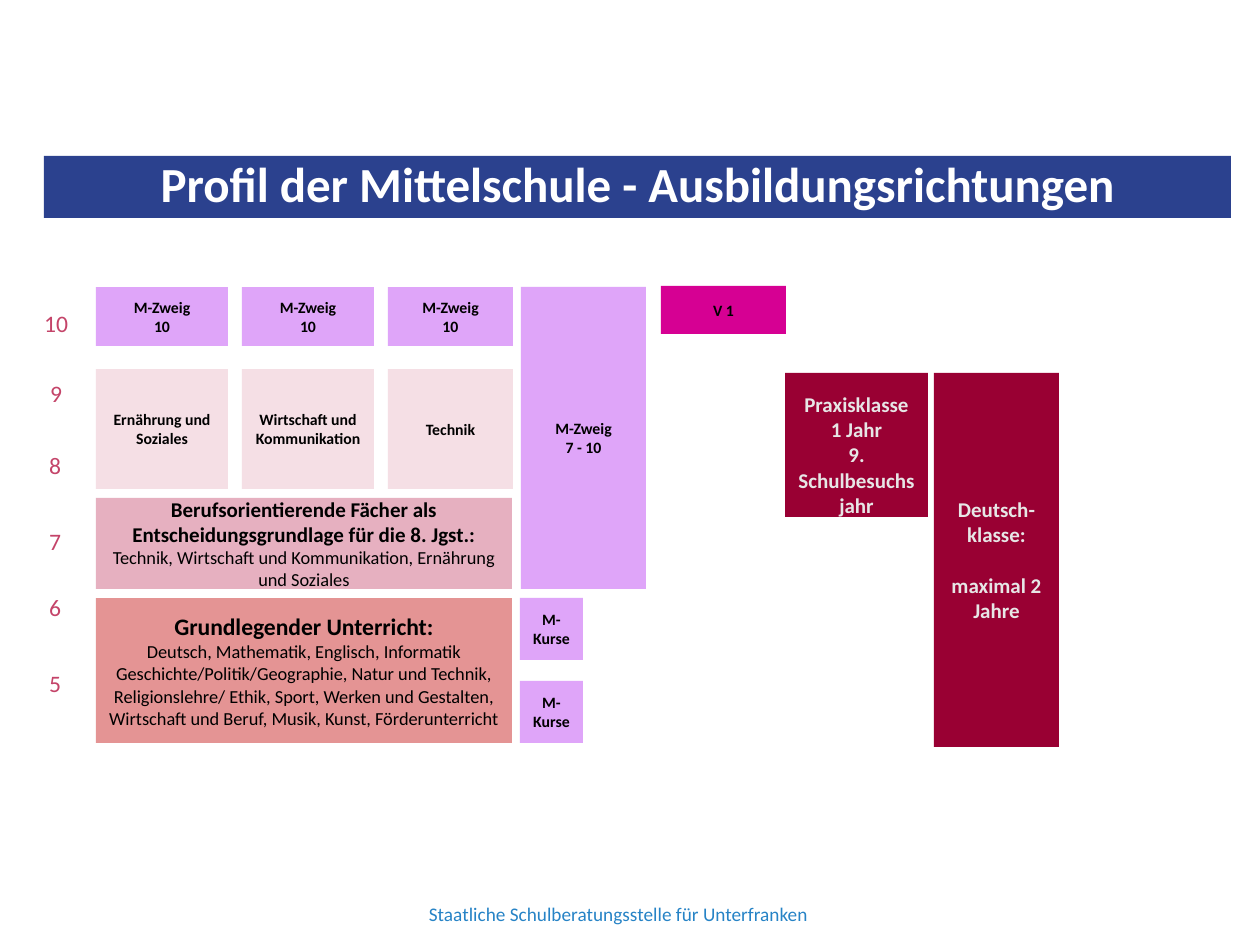
from lxml import etree
from pptx import Presentation
from pptx.dml.color import RGBColor
from pptx.enum.shapes import MSO_SHAPE as SHAPE
from pptx.enum.text import MSO_ANCHOR as ANCHOR, PP_ALIGN as ALIGN
from pptx.oxml.ns import qn
from pptx.util import Emu, Pt

SCALE = 914400 / 126  # EMU per px
COLORS = {
    "navy": "2B418E", "white": "FFFFFF", "black": "000000", "blue": "2683C6",
    "rose": "C44469", "red": "C00000", "blush": "F5DFE5", "lilac": "DFA5F9",
    "magenta": "D60093", "wine": "990033", "grey": "E7E6E6",
}

deck = Presentation()
deck.slide_width, deck.slide_height = Emu(round(1260 * SCALE)), Emu(round(945 * SCALE))
page = deck.slides.add_slide(deck.slide_layouts[6])


def add_box(text, at, fill=None, alpha=None, color="black", size=9, bold=True,
            detail=None, gap=0, spacing=None, side=13, top=6, anchor=ANCHOR.MIDDLE):
    """Place text, one paragraph a line; detail is a plain last paragraph."""
    place = [Emu(round(px * SCALE)) for px in at]
    if fill:
        box = page.shapes.add_shape(SHAPE.RECTANGLE, *place)
        box.shadow.inherit = False
        box.fill.solid()
        box.fill.fore_color.rgb = RGBColor.from_string(COLORS[fill])
        box.line.fill.background()
        if alpha:
            tint = box.fill._xPr.find(".//" + qn("a:srgbClr"))
            etree.SubElement(tint, qn("a:alpha")).set("val", str(alpha * 1000))
    else:
        box = page.shapes.add_textbox(*place)
    frame = box.text_frame
    frame.word_wrap = True
    frame.vertical_anchor = anchor
    frame.margin_left = frame.margin_right = Emu(round(side * SCALE))
    frame.margin_top, frame.margin_bottom = Emu(round(top * SCALE)), Emu(round(6 * SCALE))

    lines = [(line, size, bold) for line in text.split("\n")]
    if detail:
        lines.append((detail, 10.5, False))
    for index, (line, points, heavy) in enumerate(lines):
        para = frame.paragraphs[0] if index == 0 else frame.add_paragraph()
        para.alignment = ALIGN.CENTER
        if spacing:
            para.line_spacing = spacing
        if index and gap:
            para.space_before = Pt(gap)
        span = para.add_run()
        span.text = line
        span.font.name = "Calibri"
        span.font.size = Pt(points)
        span.font.bold = heavy
        span.font.color.rgb = RGBColor.from_string(COLORS[color])


# Footer and title
add_box("Staatliche Schulberatungsstelle für Unterfranken", (389, 896, 459, 36),
        color="blue", size=11, bold=False, anchor=ANCHOR.TOP)
add_box("Profil der Mittelschule - Ausbildungsrichtungen", (44, 156, 1187, 62),
        fill="navy", color="white", size=28, spacing=0.9)

# Grade labels
for grade, left, top in [(10, 29, 299), (9, 29, 369), (8, 28, 441),
                         (7, 28, 517), (6, 28, 583), (5, 28, 659)]:
    add_box(str(grade), (left, top, 54, 48), color="rose", size=13.5, bold=False)

# Common lessons, grades 5 to 7
add_box("Grundlegender Unterricht:", (96, 598, 416, 145), fill="red", alpha=42, size=13.5,
        detail="Deutsch, Mathematik, Englisch, Informatik Geschichte/Politik/Geographie, "
               "Natur und Technik, Religionslehre/ Ethik, Sport, Werken und Gestalten, "
               "Wirtschaft und Beruf, Musik, Kunst, Förderunterricht")
add_box("Berufsorientierende Fächer als Entscheidungsgrundlage für die 8. Jgst.:",
        (96, 498, 416, 91), fill="rose", alpha=42, size=12,
        detail="Technik, Wirtschaft und Kommunikation, Ernährung und Soziales")

# Vocational branches, each topped by M-Zweig 10
for branch, left, width, side in [("Ernährung und Soziales", 96, 132, 13),
                                  ("Wirtschaft und Kommunikation", 242, 132, 4),
                                  ("Technik", 388, 125, 13)]:
    add_box(branch, (left, 369, width, 120), fill="blush", side=side)
    add_box("M-Zweig\n10", (left, 287, width, 59), fill="lilac")

# M-Zweig 7 - 10, M-Kurse and V 1
add_box("M-Zweig\n7 - 10", (521, 287, 125, 302), fill="lilac")
for top in (598, 681):
    add_box("M-Kurse", (520, top, 63, 62), fill="lilac")
add_box("V 1", (661, 286, 125, 48), fill="magenta")

# Special classes
add_box("Praxisklasse\n1 Jahr\n9. Schulbesuchsjahr", (785, 373, 143, 144),
        fill="wine", color="grey", size=12, top=25)
add_box("Deutsch-klasse:\nmaximal 2 Jahre", (934, 373, 125, 374),
        fill="wine", color="grey", size=12, gap=14.6)

deck.save("out.pptx")
